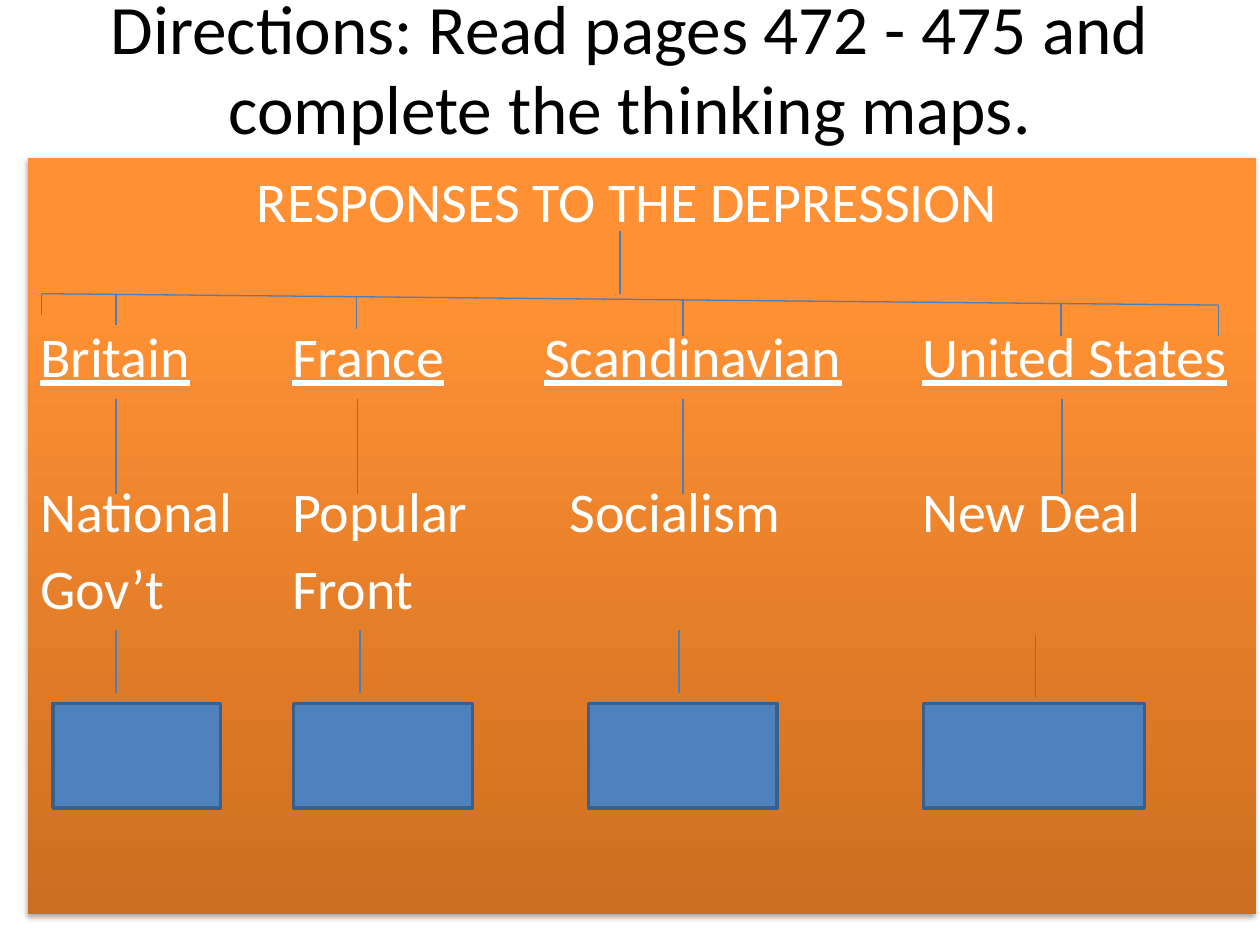
from lxml import etree
from pptx import Presentation, util as u
from pptx.dml.color import RGBColor
from pptx.enum import shapes, text
from pptx.oxml import ns

BLACK = RGBColor(0x00, 0x00, 0x00)
WHITE = RGBColor(0xFF, 0xFF, 0xFF)
ORANGE = RGBColor(0xFF, 0x90, 0x34)
RUST = RGBColor(0xCC, 0x6E, 0x20)
BLUE = RGBColor(0x4F, 0x81, 0xBD)
NAVY = RGBColor(0x3A, 0x5F, 0x8C)
LINE_BLUE = RGBColor(0x4B, 0x7E, 0xBC)

TITLE_FONT = {"name": "Calibri", "size": u.Pt(39.6)}
MAP_FONT = {"name": "Calibri", "size": u.Pt(32)}
PLAIN_TABS = (5.08, 10.16, 17.78)
SOCIALISM_TABS = (5.08, 10.67, 17.78)
ROWS = [
    (["RESPONSES TO THE DEPRESSION"], 0, 4.37, (), False),
    (["Britain", "France", "Scandinavian", "United States"], 50.1, 0, PLAIN_TABS, True),
    (["National", "Popular", "Socialism", "New Deal"], 50.1, 0, SOCIALISM_TABS, False),
    (["Gov’t", "Front"], 5.5, 0, PLAIN_TABS, False),
]


def set_all(target, values):
    for name, value in values.items():
        setattr(target, name, value)


def add_span(para, words, font, color, underline=False):
    span = para.add_run()
    span.text = words
    set_all(span.font, {**font, "underline": underline})
    span.font.color.rgb = color


def add_line(page, box, x1, y1, x2, y2):
    left, top = box[:2]
    line = page.shapes.add_connector(
        shapes.MSO_CONNECTOR.STRAIGHT,
        u.Cm(left + x1), u.Cm(top + y1), u.Cm(left + x2), u.Cm(top + y2))
    line.line.width = u.Pt(0.75)
    line.line.color.rgb = LINE_BLUE
    etree.SubElement(line._element.spPr, ns.qn("a:effectLst"))


def add_shadow(shape):
    shape.shadow.inherit = False
    effects = shape._element.spPr.find(ns.qn("a:effectLst"))
    shadow = etree.SubElement(effects, ns.qn("a:outerShdw"), blurRad=str(u.Pt(3.1)),
                              dist=str(u.Pt(1.8)), dir="5400000", rotWithShape="0")
    color = etree.SubElement(shadow, ns.qn("a:srgbClr"), val=str(BLACK))
    etree.SubElement(color, ns.qn("a:alpha"), val="35000")


def add_title(page, box):
    title = page.shapes.title
    set_all(title, dict(zip(("left", "top", "width", "height"), map(u.Cm, box))))
    set_all(title.text_frame, {
        "word_wrap": True,
        "auto_size": text.MSO_AUTO_SIZE.NONE,
        "vertical_anchor": text.MSO_ANCHOR.MIDDLE,
    })
    para = title.text_frame.paragraphs[0]
    set_all(para, {"alignment": text.PP_ALIGN.CENTER, "line_spacing": 0.97})
    add_span(para, "Directions: Read pages 472 - 475 and complete the thinking maps.",
             TITLE_FONT, BLACK)


def add_panel(page, box):
    panel = page.shapes.add_shape(shapes.MSO_SHAPE.RECTANGLE, *map(u.Cm, box))
    panel.line.fill.background()
    panel.fill.gradient()
    panel.fill.gradient_angle = 90
    for stop, color, position in zip(panel.fill.gradient_stops, (RUST, ORANGE), (0, 0.8)):
        stop.color.rgb = color
        stop.position = position
    add_shadow(panel)
    frame = panel.text_frame
    set_all(frame, {"word_wrap": True, "vertical_anchor": text.MSO_ANCHOR.TOP,
                    "margin_top": u.Cm(0.18)})
    for index, (words, before, indent, tabs, underline) in enumerate(ROWS):
        para = frame.add_paragraph() if index else frame.paragraphs[0]
        set_all(para, {"alignment": text.PP_ALIGN.LEFT, "space_before": u.Pt(before)})
        properties = para._p.get_or_add_pPr()
        properties.set("marL", str(u.Cm(indent)))
        if tabs:
            stops = etree.SubElement(properties, ns.qn("a:tabLst"))
            for tab in tabs:
                etree.SubElement(stops, ns.qn("a:tab"), pos=str(u.Cm(tab)), algn="l")
        for column, word in enumerate(words):
            if column:
                add_span(para, "\t", MAP_FONT, WHITE)
            add_span(para, word, MAP_FONT, WHITE, underline)


def add_answer_boxes(page, box):
    left, top = box[:2]
    for x, width in ((0.51, 3.38), (5.36, 3.61), (11.3, 3.81), (18.06, 4.45)):
        answer = page.shapes.add_shape(
            shapes.MSO_SHAPE.RECTANGLE,
            u.Cm(left + x), u.Cm(top + 11), u.Cm(width), u.Cm(2.11))
        answer.shadow.inherit = False
        answer.fill.solid()
        answer.fill.fore_color.rgb = BLUE
        answer.line.color.rgb = NAVY
        answer.line.width = u.Pt(2)


def add_branches(page, box):
    start, end, high, low = 0.28, 24, 2.74, 2.97
    add_line(page, box, 11.94, 1.47, 11.94, high)
    add_line(page, box, start, high, end, low)
    for x, bottom in ((start, 3.17), (1.78, 3.37), (6.63, 3.45),
                      (13.21, 3.6), (20.83, 3.6), (end, 3.6)):
        bus = high + (low - high) * (x - start) / (end - start)
        add_line(page, box, x, bus, x, bottom)
    for x in (1.78, 6.65, 13.21, 20.85):
        add_line(page, box, x, 4.87, x, 6.78)
    for x, top in ((1.78, 9.52), (6.7, 9.52), (13.13, 9.52), (20.32, 9.62)):
        add_line(page, box, x, top, x, top + 1.27)


def main():
    deck = Presentation()
    set_all(deck, {"slide_width": u.Cm(25.4), "slide_height": u.Cm(19.05)})
    page = deck.slides.add_slide(deck.slide_layouts[5])
    map_box = (0.56, 3.18, 24.77, 15.24)
    add_title(page, (1.27, 0.43, 22.86, 1.98))
    for add_part in (add_panel, add_answer_boxes, add_branches):
        add_part(page, map_box)
    deck.save("out.pptx")


if __name__ == "__main__":
    main()
